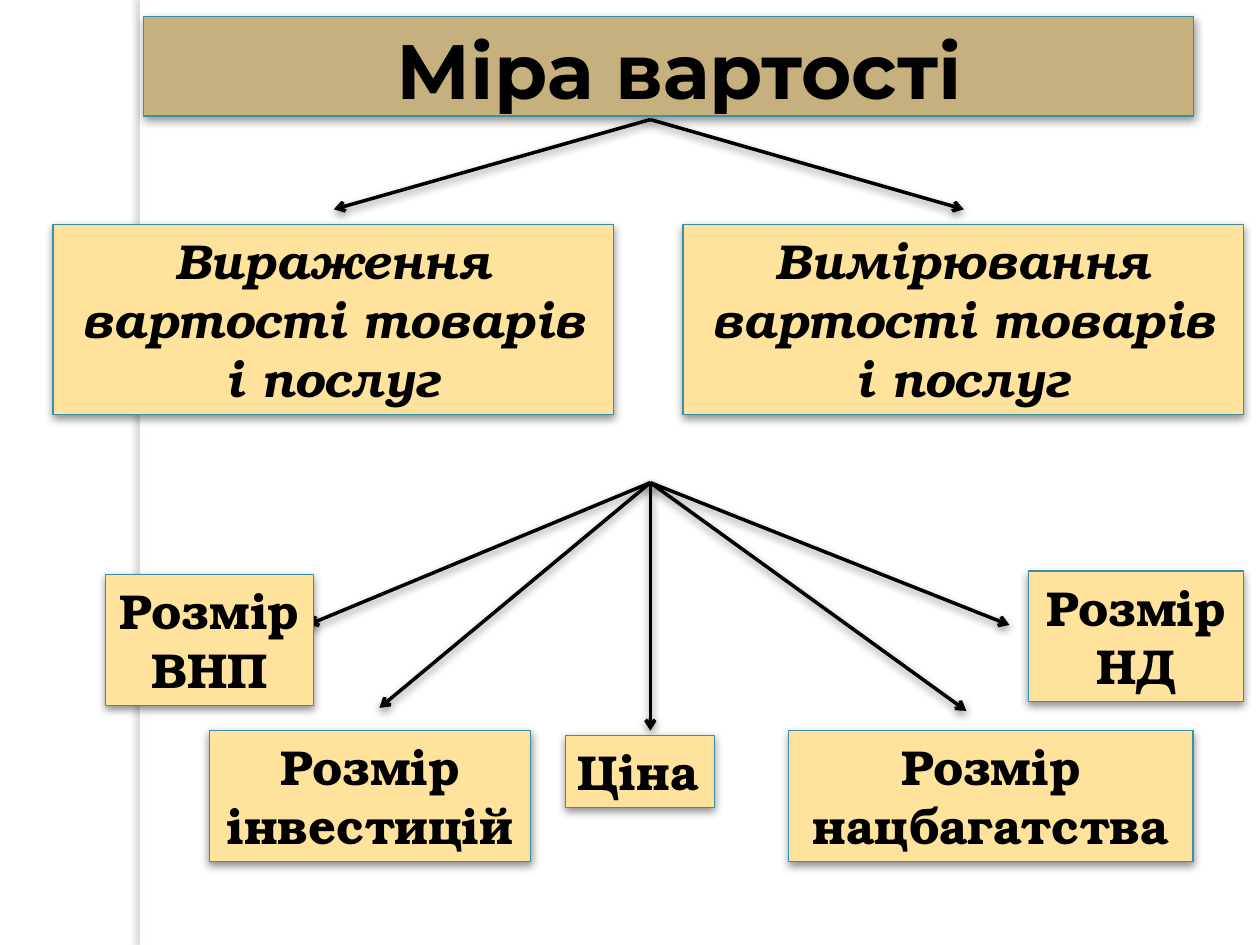
from dataclasses import dataclass

import pptx
import pptx.dml.color
import pptx.enum.shapes
import pptx.enum.text
import pptx.oxml
import pptx.oxml.ns
import pptx.util

Cm = pptx.util.Cm
Pt = pptx.util.Pt
RGB = pptx.dml.color.RGBColor
Align = pptx.enum.text.PP_ALIGN

WHITE = RGB(0xFF, 0xFF, 0xFF)
BLACK = RGB(0x00, 0x00, 0x00)
GREY = RGB(0x73, 0x6F, 0x63)
TAN = RGB(0xC6, 0xB0, 0x7E)
CREAM = RGB(0xFF, 0xE3, 0x9D)
TEAL = RGB(0x38, 0x91, 0xA7)


@dataclass
class Shade:
    color: RGB
    alpha: int
    blur: float
    dist: float
    angle: int


@dataclass
class Box:
    text: str
    left: float
    top: float
    width: float
    height: float
    fill: RGB = CREAM
    font: str = "TeX Gyre Bonum"
    size: int = 28
    italic: bool = False
    wrap: bool = True
    align: Align = Align.CENTER


@dataclass
class Fan:
    x: float
    y: float
    tips: list[tuple[float, float]]


SOFT = Shade(BLACK, 43, 5, 2, 90)
SIDE = Shade(GREY, 25, 3, 3, 180)

BOXES = [
    Box(" Міра вартості", 2.9, 0.33, 21.16, 2.01, TAN, "Montserrat", 44),
    Box("Вираження вартості товарів і послуг", 1.07, 4.52, 11.3, 3.84, italic=True),
    Box("Вимірювання вартості товарів і послуг", 13.77, 4.52, 11.3, 3.84, italic=True),
    Box("Ціна", 11.4, 14.83, 3, 1.45, wrap=False, align=Align.LEFT),
    Box("Розмір\nВНП", 2.13, 11.58, 4.19, 2.64, wrap=False),
    Box("Розмір\nНД", 20.73, 11.51, 4.34, 2.64),
    Box("Розмір\nінвестицій", 4.22, 14.73, 6.48, 2.64),
    Box("Розмір\nнацбагатства", 15.9, 14.73, 8.15, 2.64),
]

FANS = [
    Fan(13.11, 2.41, [(6.73, 4.22), (19.43, 4.22)]),
    Fan(13.11, 9.73, [(19.48, 14.33), (7.65, 14.27), (20.35, 12.6),
                      (6.2, 12.6), (13.11, 14.73)]),
]


def cast(props, shade: Shade) -> None:
    for old in props.findall(pptx.oxml.ns.qn("a:effectLst")):
        props.remove(old)
    props.append(pptx.oxml.parse_xml(
        f'<a:effectLst {pptx.oxml.ns.nsdecls("a")}>'
        f'<a:outerShdw blurRad="{Pt(shade.blur)}" dist="{Pt(shade.dist)}" '
        f'dir="{shade.angle * 60000}" algn="ctr" rotWithShape="0">'
        f'<a:srgbClr val="{shade.color}"><a:alpha val="{shade.alpha * 1000}"/>'
        '</a:srgbClr></a:outerShdw></a:effectLst>'))


def add_rect(slide, left: float, top: float, width: float, height: float,
             fill: RGB):
    rect = slide.shapes.add_shape(
        pptx.enum.shapes.MSO_SHAPE.RECTANGLE,
        Cm(left), Cm(top), Cm(width), Cm(height))
    rect.shadow.inherit = False
    rect.fill.solid()
    rect.fill.fore_color.rgb = fill
    return rect


def add_strip(slide) -> None:
    strip = add_rect(slide, 2.82, 0, 0.2, 19.05, WHITE)
    strip.line.fill.background()
    cast(strip._element.spPr, SIDE)


def add_box(slide, box: Box) -> None:
    rect = add_rect(slide, box.left, box.top, box.width, box.height, box.fill)
    rect.line.color.rgb = TEAL
    rect.line.width = Pt(0.75)
    cast(rect._element.spPr, SOFT)
    frame = rect.text_frame
    frame.text = box.text
    frame.word_wrap = box.wrap
    frame.vertical_anchor = pptx.enum.text.MSO_ANCHOR.TOP
    for para in frame.paragraphs:
        para.alignment = box.align
        for run in para.runs:
            run.font.name = box.font
            run.font.size = Pt(box.size)
            run.font.bold = True
            run.font.italic = box.italic
            run.font.color.rgb = BLACK


def add_fan(slide, fan: Fan) -> None:
    for x, y in fan.tips:
        line = slide.shapes.add_connector(
            pptx.enum.shapes.MSO_CONNECTOR.STRAIGHT,
            Cm(fan.x), Cm(fan.y), Cm(x), Cm(y))
        line.line.color.rgb = BLACK
        line.line.width = Pt(2)
        line.line._get_or_add_ln().append(pptx.oxml.parse_xml(
            f'<a:tailEnd {pptx.oxml.ns.nsdecls("a")} type="arrow"/>'))
        cast(line._element.spPr, SOFT)


def main() -> None:
    deck = pptx.Presentation()
    deck.slide_width = Cm(25.4)
    deck.slide_height = Cm(19.05)
    slide = deck.slides.add_slide(deck.slide_layouts[6])
    add_strip(slide)
    for fan in FANS:
        add_fan(slide, fan)
    for box in BOXES:
        add_box(slide, box)
    deck.save("out.pptx")


if __name__ == "__main__":
    main()
